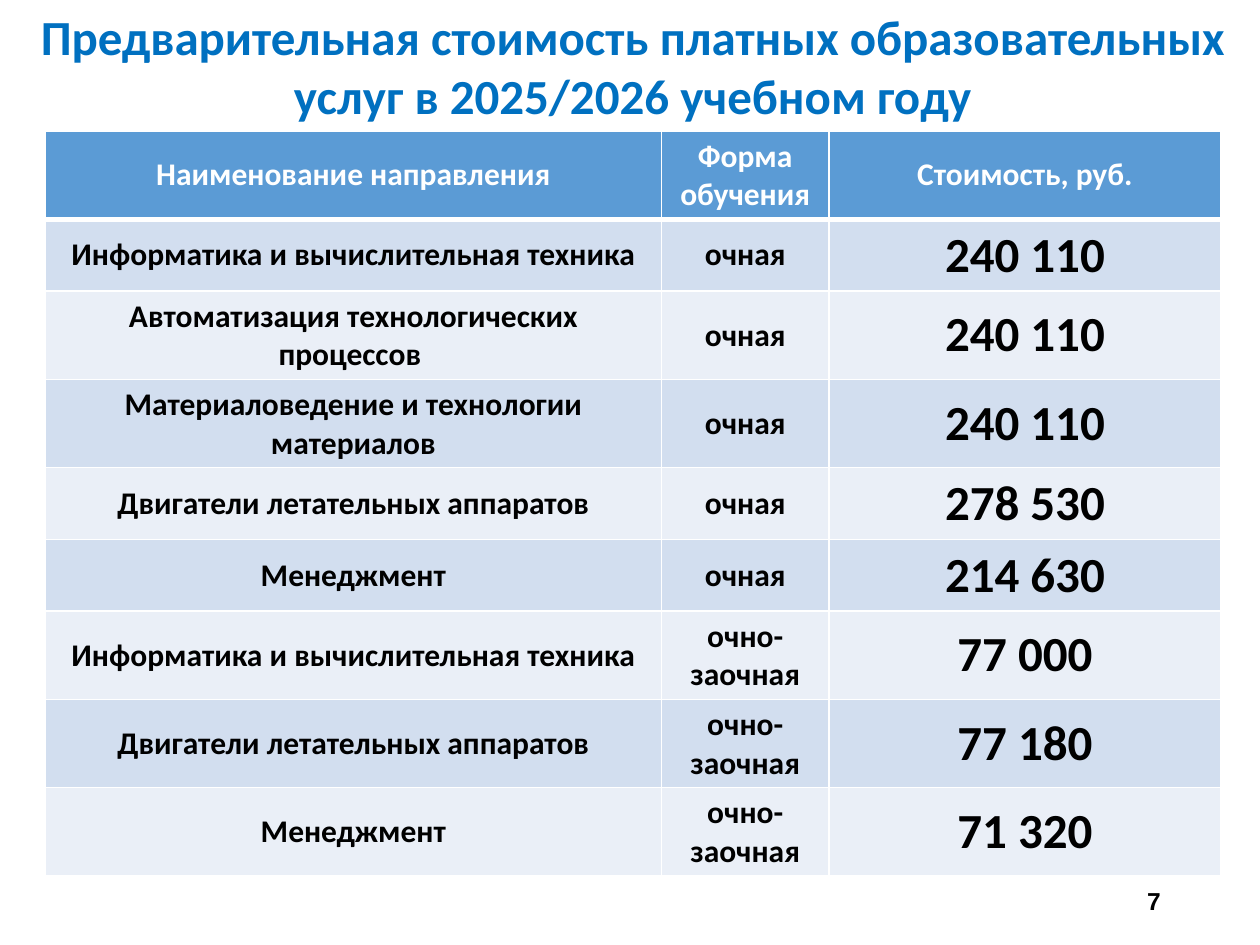
from lxml.etree import SubElement as Sub
from pptx import Presentation
from pptx.dml.color import RGBColor
from pptx.enum.text import MSO_ANCHOR as Anchor, PP_ALIGN as Align
from pptx.oxml.ns import qn
from pptx.util import Inches, Pt

BLUE = RGBColor(0x00, 0x70, 0xC0)
HEAD = RGBColor(0x5B, 0x9B, 0xD5)
BANDS = (RGBColor(0xEA, 0xEF, 0xF7), RGBColor(0xD2, 0xDE, 0xEF))
WHITE = RGBColor(0xFF, 0xFF, 0xFF)
BLACK = RGBColor(0x00, 0x00, 0x00)

COLS = (4.89, 1.33, 3.11)
TALL, SHORT = 0.7, 0.57
FULL, PART = "очная", "очно-заочная"
ROWS = (
    (TALL, "Наименование направления", "Форма обучения", "Стоимость, руб."),
    (SHORT, "Информатика и вычислительная техника", FULL, "240 110"),
    (TALL, "Автоматизация технологических процессов ", FULL, "240 110"),
    (TALL, "Материаловедение и технологии материалов", FULL, "240 110"),
    (SHORT, "Двигатели летательных аппаратов", FULL, "278 530"),
    (SHORT, "Менеджмент", FULL, "214 630"),
    (TALL, "Информатика и вычислительная техника", PART, "77 000"),
    (TALL, "Двигатели летательных аппаратов", PART, "77 180"),
    (TALL, "Менеджмент", PART, "71 320"),
)


def write(frame, text, size, color, align=Align.CENTER, face="Calibri"):
    frame.text = text
    frame.word_wrap = True
    para = frame.paragraphs[0]
    para.alignment = align
    font = para.font
    font.name, font.size, font.bold = face, Pt(size), True
    font.color.rgb = color


def add_title(slide, left, top, width, height):
    title = slide.shapes.title
    title.left, title.top = Inches(left), Inches(top)
    title.width, title.height = Inches(width), Inches(height)
    write(title.text_frame,
          "Предварительная стоимость платных образовательных "
          "услуг в 2025/2026 учебном году", 28, BLUE)
    title.text_frame.vertical_anchor = Anchor.TOP


def add_edges(cell, top, bottom):
    """Draw white cell borders; top and bottom are widths in points."""
    props = cell._tc.get_or_add_tcPr()
    for side, width in (("L", 1), ("R", 1), ("T", top), ("B", bottom)):
        line = Sub(props, qn(f"a:ln{side}"), w=str(Pt(width)))
        fill = Sub(line, qn("a:solidFill"))
        Sub(fill, qn("a:srgbClr"), val=str(WHITE))


def add_prices(slide, left, top):
    high = sum(row[0] for row in ROWS)
    table = slide.shapes.add_table(
        len(ROWS), len(COLS), Inches(left), Inches(top),
        Inches(sum(COLS)), Inches(high)).table
    for col, width in zip(table.columns, COLS):
        col.width = Inches(width)
    for i, (height, *texts) in enumerate(ROWS):
        table.rows[i].height = Inches(height)
        for j, text in enumerate(texts):
            cell = table.cell(i, j)
            size = 28 if i and j == 2 else 18
            write(cell.text_frame, text, size, BLACK if i else WHITE)
            cell.vertical_anchor = Anchor.MIDDLE
            add_edges(cell, 3 if i == 1 else 1, 1 if i else 3)
            cell.fill.solid()
            cell.fill.fore_color.rgb = BANDS[i % 2] if i else HEAD


def add_number(slide, left, top, width, height):
    box = slide.shapes.add_textbox(
        Inches(left), Inches(top), Inches(width), Inches(height))
    write(box.text_frame, "7", 14, BLACK, Align.RIGHT, "Arial")
    box.text_frame.vertical_anchor = Anchor.MIDDLE


def main():
    deck = Presentation()
    deck.slide_width, deck.slide_height = Inches(10), Inches(7.5)
    slide = deck.slides.add_slide(deck.slide_layouts[5])
    add_title(slide, 0.02, 0, 10, 1.04)
    add_number(slide, 7.06, 6.95, 2.25, 0.4)
    add_prices(slide, 0.36, 1.04)
    deck.save("out.pptx")


if __name__ == "__main__":
    main()
